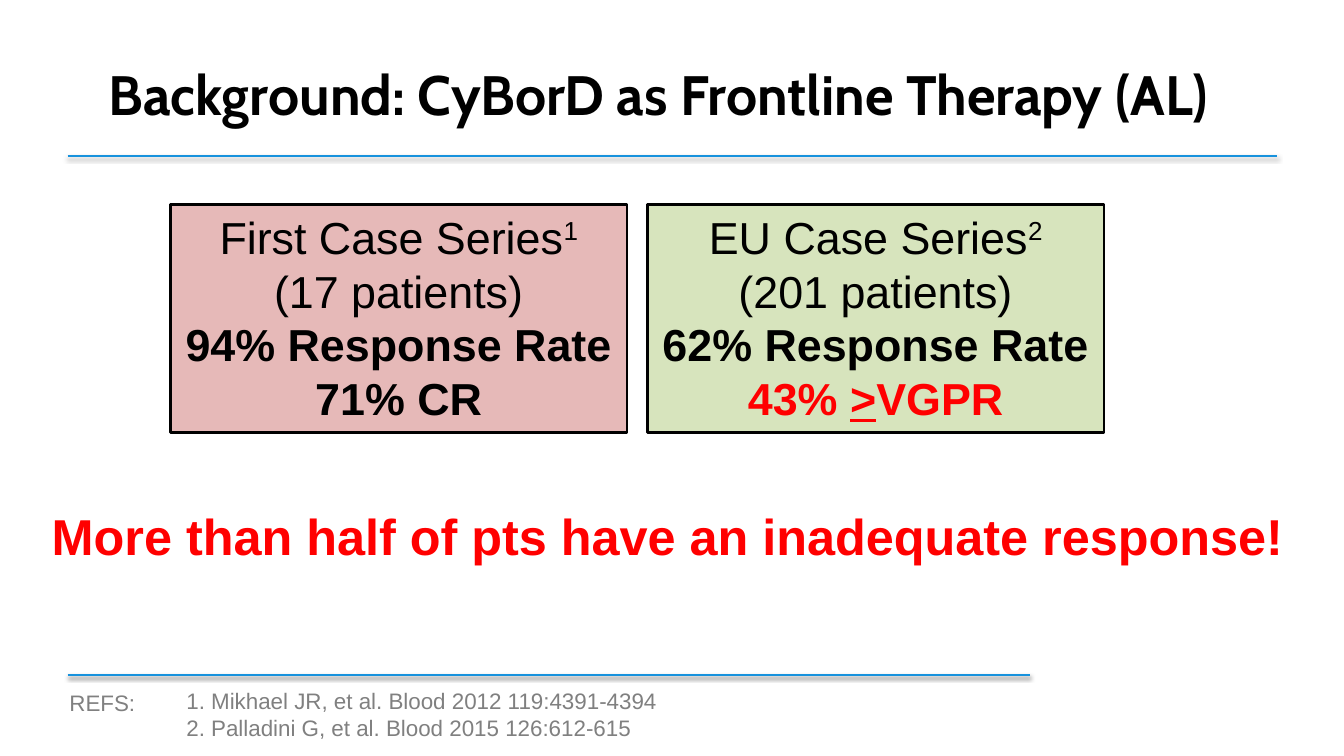
from lxml import etree
from pptx import Presentation
from pptx.dml.color import RGBColor
from pptx.enum.shapes import MSO_CONNECTOR, MSO_SHAPE
from pptx.enum.text import MSO_ANCHOR, PP_ALIGN
from pptx.oxml.ns import qn
from pptx.util import Inches, Pt

STRAIGHT = MSO_CONNECTOR.STRAIGHT
RECTANGLE = MSO_SHAPE.RECTANGLE
TOP, MIDDLE = MSO_ANCHOR.TOP, MSO_ANCHOR.MIDDLE
LEFT, CENTER = PP_ALIGN.LEFT, PP_ALIGN.CENTER

COLORS = {"black": "000000", "red": "FF0000", "gray": "808080",
          "rule": "1792DD", "rose": "E6B9B8", "green": "D7E4BD"}

TITLE = "Background: CyBorD as Frontline Therapy (AL)"
SERIES = [
    ("rose", [[("First Case Series", ""), ("1", "super")],
              [("(17 patients)", "")],
              [("94% Response Rate", "bold")],
              [("71% CR", "bold")]]),
    ("green", [[("EU Case Series", ""), ("2", "super")],
               [("(201 patients)", "")],
               [("62% Response Rate", "bold")],
               [("43% ", "bold red"), (">", "bold red underline"), ("VGPR", "bold red")]]),
]
MESSAGE = [[("More than half of pts have an inadequate response!", "bold red")]]
REFS_LABEL = [[("REFS:", "gray")]]
REFS = [[("1. Mikhael JR, et al. Blood 2012 119:4391-4394", "gray")],
        [("2. Palladini G, et al. Blood 2015 126:612-615", "gray")]]

WIDTH, HEIGHT = 13.33, 7.5
MARGIN = 0.67
RULES = [(1.55, 12.0), (6.7, 9.55)]
CARD_LEFT, CARD_TOP, CARD_WIDTH, CARD_HEIGHT, CARD_GAP = 1.69, 2.03, 4.53, 2.26, 0.2


def color(name):
    return RGBColor.from_string(COLORS[name])


def write(shape, lines, size, align=LEFT, anchor=TOP, wrap=True, spacing=None):
    frame = shape.text_frame
    frame.word_wrap = wrap
    frame.vertical_anchor = anchor
    for index, line in enumerate(lines):
        para = frame.add_paragraph() if index else frame.paragraphs[0]
        para.alignment = align
        para.line_spacing = spacing
        for text, style in line:
            words = style.split()
            span = para.add_run()
            span.text = text
            font = span.font
            font.name, font.size = "Arial", Pt(size)
            font.bold = "bold" in words
            font.underline = "underline" in words
            font.color.rgb = color(next((word for word in words if word in COLORS), "black"))
            if "super" in words:
                font._element.set("baseline", "30000")


def add_rule(page, top, length):
    rule = page.shapes.add_connector(STRAIGHT, Inches(MARGIN), Inches(top),
                                     Inches(MARGIN + length), Inches(top))
    rule.line.color.rgb = color("rule")
    rule.line.width = Pt(1.5)
    effects = etree.SubElement(rule._element.spPr, qn("a:effectLst"))
    shadow = etree.SubElement(effects, qn("a:outerShdw"), blurRad=str(Pt(3.1)),
                              dist=str(Pt(1.6)), dir="5400000", rotWithShape="0")
    tint = etree.SubElement(shadow, qn("a:srgbClr"), val=COLORS["black"])
    etree.SubElement(tint, qn("a:alpha"), val="38000")


def add_text(page, left, top, width, height, lines, size, **layout):
    box = page.shapes.add_textbox(Inches(left), Inches(top), Inches(width), Inches(height))
    write(box, lines, size, **layout)


def add_card(page, column, fill, lines):
    left = CARD_LEFT + column * (CARD_WIDTH + CARD_GAP)
    card = page.shapes.add_shape(RECTANGLE, Inches(left), Inches(CARD_TOP),
                                 Inches(CARD_WIDTH), Inches(CARD_HEIGHT))
    card.shadow.inherit = False
    card.fill.solid()
    card.fill.fore_color.rgb = color(fill)
    card.line.color.rgb = color("black")
    card.line.width = Pt(2)
    write(card, lines, 32, align=CENTER, wrap=False)


def set_title(page):
    title = page.shapes.title
    title.left, title.top = Inches(0.2), Inches(0.3)
    title.width, title.height = Inches(WIDTH * 0.95), Inches(HEIGHT / 6)
    title.text_frame.text = TITLE
    title.text_frame.vertical_anchor = MIDDLE
    para = title.text_frame.paragraphs[0]
    para.alignment = CENTER
    font = para.runs[0].font
    font.name, font.size, font.bold = "Cabin", Pt(39.6), True
    font.color.rgb = color("black")


def main():
    deck = Presentation()
    deck.slide_width, deck.slide_height = Inches(WIDTH), Inches(HEIGHT)
    page = deck.slides.add_slide(deck.slide_layouts[5])
    for top, length in RULES:
        add_rule(page, top, length)
    set_title(page)
    for column, (fill, lines) in enumerate(SERIES):
        add_card(page, column, fill, lines)
    add_text(page, 0.59, 6.79, 1.41, 0.37, REFS_LABEL, 16)
    add_text(page, 1.75, 6.77, 4.97, 0.64, REFS, 16, wrap=False)
    add_text(page, 0, 4.72, 13.25, HEIGHT / 6, MESSAGE, 36,
             align=CENTER, anchor=MIDDLE, spacing=0.9)
    deck.save("out.pptx")


if __name__ == "__main__":
    main()
